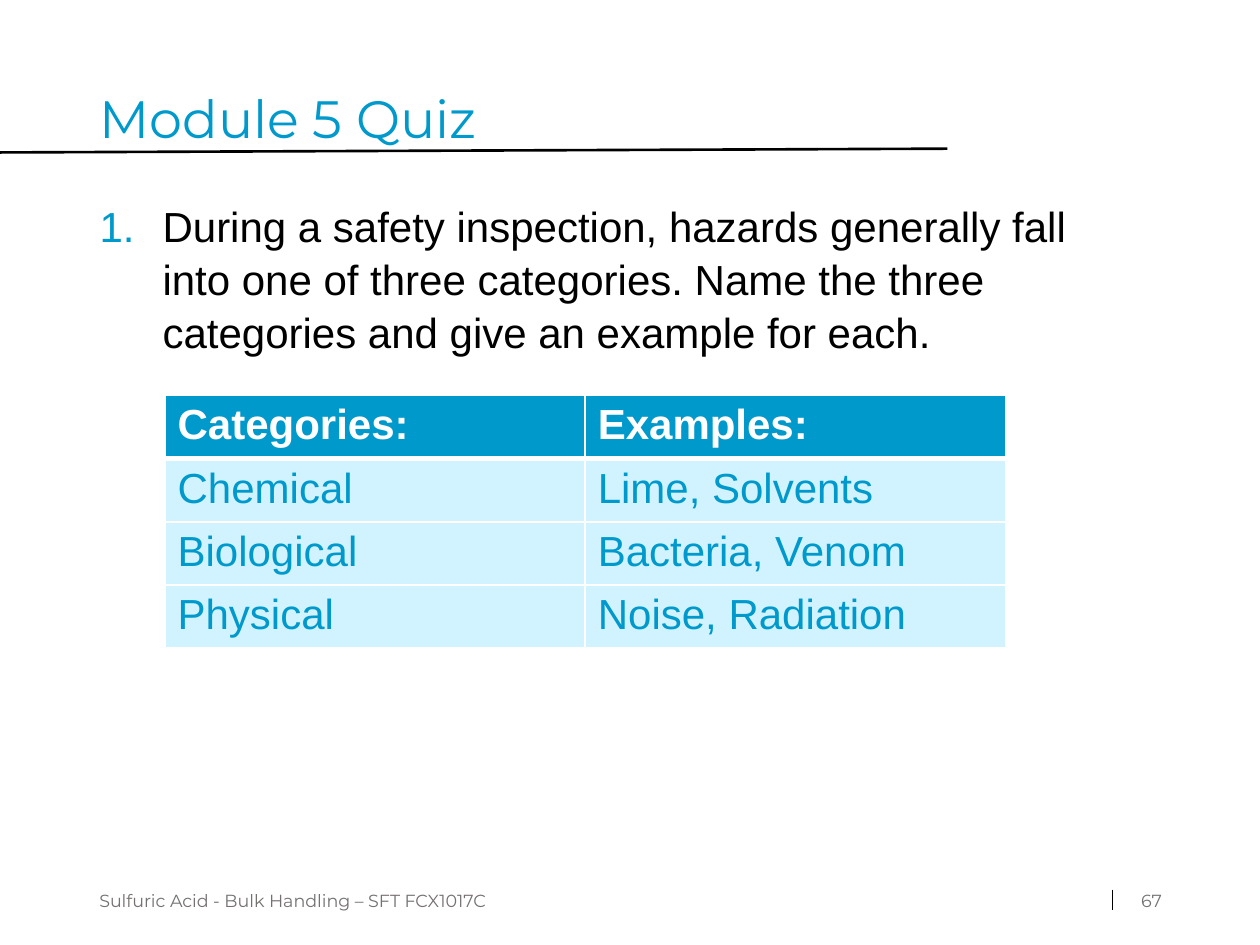
from dataclasses import dataclass

from lxml import etree
from pptx import Presentation
from pptx.dml.color import RGBColor
from pptx.enum.shapes import MSO_CONNECTOR
from pptx.enum.text import MSO_ANCHOR, MSO_AUTO_SIZE, PP_ALIGN
from pptx.oxml.ns import qn
from pptx.util import Inches, Pt

STRAIGHT = MSO_CONNECTOR.STRAIGHT
TOP, MIDDLE = MSO_ANCHOR.TOP, MSO_ANCHOR.MIDDLE
LEFT, RIGHT = PP_ALIGN.LEFT, PP_ALIGN.RIGHT
NO_AUTOFIT = MSO_AUTO_SIZE.NONE
BLUE, PALE, GREY, BLACK, WHITE = "0099CC", "D1F3FF", "767171", "000000", "FFFFFF"


@dataclass
class Style:
    font: str
    size: float
    color: str
    bold: bool = False


@dataclass
class Rule:
    x1: float
    y1: float
    x2: float
    y2: float
    width: float


@dataclass
class Footer:
    text: str
    x: float
    width: float
    align: PP_ALIGN


TITLE = Style("Montserrat", 30, BLUE)
QUESTION = Style("Arial", 24, BLACK)
FOOTER = Style("Montserrat", 10, GREY)
HEADER_CELL = Style("Arial", 24, WHITE, True)
BODY_CELL = Style("Arial", 24, BLUE)

RULES = [Rule(0, 1.21, 7.52, 1.18, 1.5), Rule(8.83, 7.06, 8.83, 7.22, 1)]
FOOTERS = [
    Footer("Sulfuric Acid - Bulk Handling – SFT FCX1017C", 0.69, 6, LEFT),
    Footer("67", 7.36, 1.96, RIGHT),
]
ROWS = [
    ("Categories:", "Examples:"),
    ("Chemical", "Lime, Solvents"),
    ("Biological", "Bacteria, Venom"),
    ("Physical", "Noise, Radiation"),
]


def rgb(color: str) -> RGBColor:
    return RGBColor.from_string(color)


def write(tf, text: str, style: Style, align=LEFT, anchor=TOP):
    """Fill a text frame with one styled paragraph and return it."""
    tf.text = text
    tf.word_wrap = True
    tf.vertical_anchor = anchor
    p = tf.paragraphs[0]
    p.alignment = align
    font = p.runs[0].font
    font.name, font.size, font.bold = style.font, Pt(style.size), style.bold
    font.color.rgb = rgb(style.color)
    return p


def place(sp, x: float, y: float, w: float, h: float) -> None:
    sp.left, sp.top, sp.width, sp.height = map(Inches, (x, y, w, h))


def add_rule(s, rule: Rule) -> None:
    ends = map(Inches, (rule.x1, rule.y1, rule.x2, rule.y2))
    line = s.shapes.add_connector(STRAIGHT, *ends)
    line.line.color.rgb = rgb(BLACK)
    line.line.width = Pt(rule.width)
    etree.SubElement(line._element.spPr, qn("a:effectLst"))


def add_footer(s, footer: Footer) -> None:
    box = s.shapes.add_textbox(Inches(footer.x), Inches(6.95), Inches(footer.width), Inches(0.4))
    write(box.text_frame, footer.text, FOOTER, footer.align, MIDDLE)


def number_paragraph(p, color: str) -> None:
    """Give a paragraph a hanging automatic number."""
    pPr = p._p.get_or_add_pPr()
    pPr.set("marL", str(Inches(0.5)))
    pPr.set("indent", str(-Inches(0.5)))
    bullet_color = etree.SubElement(pPr, qn("a:buClr"))
    etree.SubElement(bullet_color, qn("a:srgbClr"), val=color)
    etree.SubElement(pPr, qn("a:buFont"), typeface="+mj-lt")
    etree.SubElement(pPr, qn("a:buAutoNum"), type="arabicPeriod")


def set_borders(cell, bottom: float, top: float) -> None:
    tcPr = cell._tc.get_or_add_tcPr()
    widths = {"a:lnL": 1, "a:lnR": 1, "a:lnT": top, "a:lnB": bottom}
    for i, (tag, width) in enumerate(widths.items()):
        ln = etree.Element(qn(tag), w=str(Pt(width)))
        fill = etree.SubElement(ln, qn("a:solidFill"))
        etree.SubElement(fill, qn("a:srgbClr"), val=WHITE)
        tcPr.insert(i, ln)


def add_categories_table(s) -> None:
    row_height = Inches(0.47)
    frame = s.shapes.add_table(len(ROWS), 2, Inches(1.31), Inches(3.14),
                               Inches(6.67), row_height * len(ROWS))
    table = frame.table
    for i, texts in enumerate(ROWS):
        table.rows[i].height = row_height
        for j, text in enumerate(texts):
            cell = table.cell(i, j)
            write(cell.text_frame, text, BODY_CELL if i else HEADER_CELL)
            cell.fill.solid()
            cell.fill.fore_color.rgb = rgb(PALE if i else BLUE)
            set_borders(cell, bottom=1 if i else 3, top=3 if i == 1 else 1)


def main() -> None:
    prs = Presentation()
    prs.slide_width, prs.slide_height = Inches(10), Inches(7.5)
    s = prs.slides.add_slide(prs.slide_layouts[1])

    for rule in RULES:
        add_rule(s, rule)
    for footer in FOOTERS:
        add_footer(s, footer)

    title, body = s.shapes.title, s.placeholders[1]
    place(title, 0.69, 0.63, 6.83, 0.71)
    write(title.text_frame, "Module 5 Quiz", TITLE)
    place(body, 0.69, 1.52, 7.92, 1.89)
    p = write(body.text_frame,
              "During a safety inspection, hazards generally fall into one of three "
              "categories. Name the three categories and give an example for each.", QUESTION)
    p.line_spacing = 1.05
    p.space_before = p.space_after = Pt(6)
    number_paragraph(p, BLUE)
    for sp in (title, body):
        sp.text_frame.auto_size = NO_AUTOFIT

    add_categories_table(s)
    prs.save("out.pptx")


if __name__ == "__main__":
    main()
